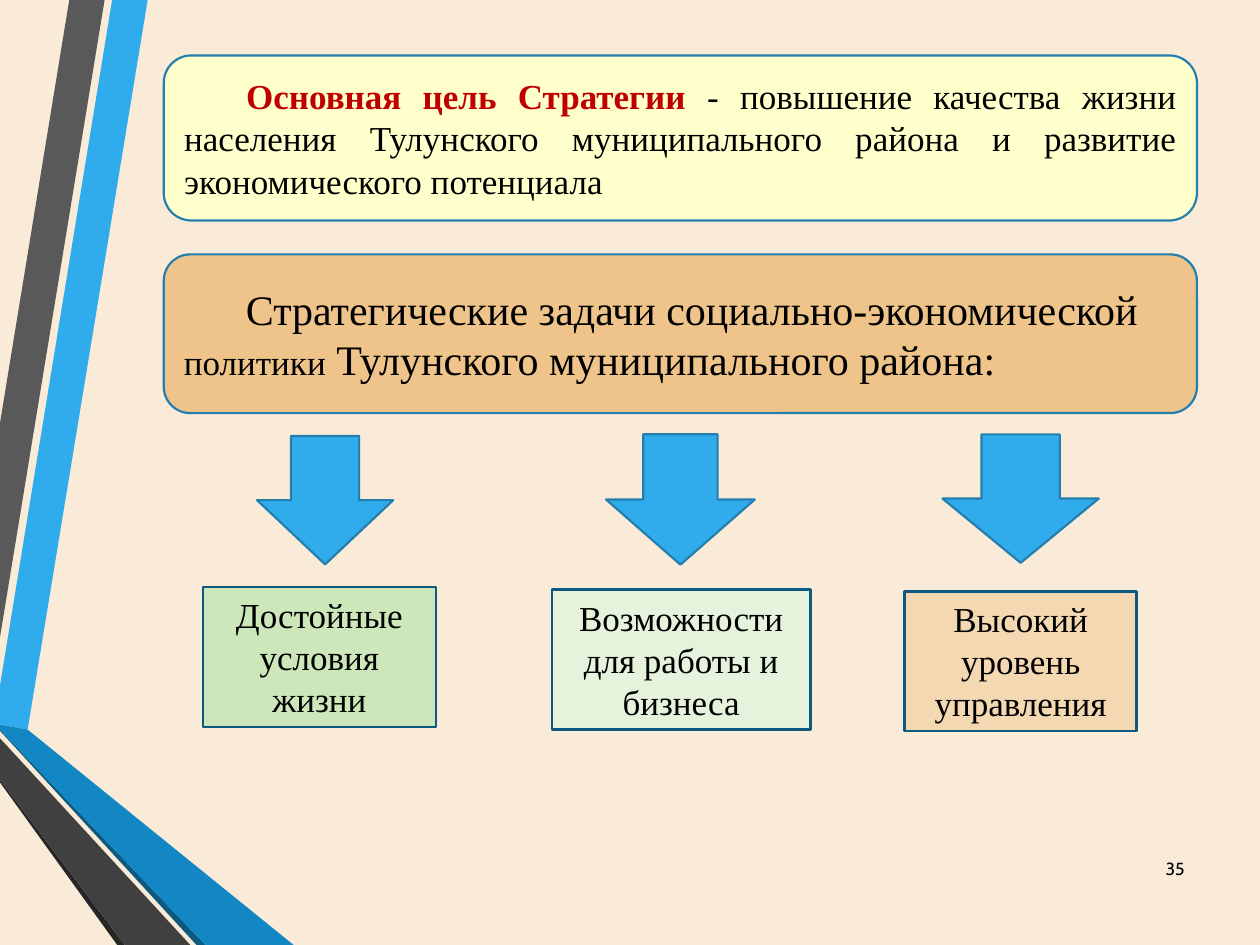
from pptx import Presentation
from pptx.dml.color import RGBColor
from pptx.enum.shapes import MSO_SHAPE as SHAPE
from pptx.enum.text import MSO_ANCHOR as ANCHOR, PP_ALIGN as ALIGN
from pptx.util import Pt

CREAM = RGBColor(0xF9, 0xEB, 0xD8)
BLUE = RGBColor(0x30, 0xAC, 0xEC)
MID_BLUE = RGBColor(0x12, 0x87, 0xC3)
EDGE_BLUE = RGBColor(0x24, 0x7F, 0xAF)
DARK_BLUE = RGBColor(0x0C, 0x5A, 0x82)
GREY = RGBColor(0x59, 0x59, 0x59)
DARK_GREY = RGBColor(0x40, 0x40, 0x40)
CHARCOAL = RGBColor(0x26, 0x26, 0x26)
YELLOW = RGBColor(0xFF, 0xFF, 0xCC)
ORANGE = RGBColor(0xEE, 0xC4, 0x8B)
GREEN = RGBColor(0xCC, 0xE7, 0xB9)
PALE_GREEN = RGBColor(0xE6, 0xF3, 0xDC)
PEACH = RGBColor(0xF3, 0xD8, 0xB2)
RED = RGBColor(0xC0, 0x00, 0x00)
BLACK = RGBColor(0x00, 0x00, 0x00)


class Deck:
    """Style of the deck and the slide being built."""
    font = "Times New Roman"
    number_font = "Cabin"

    def __init__(self, slide):
        self.s = slide
        slide.background.fill.solid()
        slide.background.fill.fore_color.rgb = CREAM

    def ribbon(self, color, points):
        pts = [(Pt(x), Pt(y)) for x, y in points]
        builder = self.s.shapes.build_freeform(*pts[0])
        builder.add_line_segments(pts[1:], close=True)
        sp = builder.convert_to_shape()
        sp.shadow.inherit = False
        sp.fill.solid()
        sp.fill.fore_color.rgb = color
        sp.line.fill.background()

    def shape(self, kind, box, fill, line, width):
        sp = self.s.shapes.add_shape(kind, *map(Pt, box))
        sp.shadow.inherit = False
        sp.fill.solid()
        sp.fill.fore_color.rgb = fill
        sp.line.color.rgb = line
        sp.line.width = Pt(width)
        return sp

    def text(self, sp, runs, align, anchor=ANCHOR.MIDDLE, indent=0, font=font):
        tf = sp.text_frame
        tf.word_wrap = True
        tf.vertical_anchor = anchor
        p = tf.paragraphs[0]
        p.alignment = align
        if indent:
            p._p.get_or_add_pPr().set("indent", str(Pt(indent)))
        for text, size, color, bold in runs:
            r = p.add_run()
            r.text = text
            r.font.name = font
            r.font.size = Pt(size)
            r.font.bold = bold
            r.font.color.rgb = color

    def panel(self, top, height, fill, runs, align):
        sp = self.shape(SHAPE.ROUNDED_RECTANGLE, (93.6, top, 590.4, height),
                        fill, EDGE_BLUE, 1.25)
        self.text(sp, runs, align, indent=35.4)

    def task(self, box, fill, text, anchor):
        sp = self.shape(SHAPE.RECTANGLE, box, fill, DARK_BLUE, 1.5)
        self.text(sp, [(text, 20, BLACK, False)], ALIGN.CENTER, anchor)

    def arrow(self, box):
        self.shape(SHAPE.DOWN_ARROW, box, BLUE, EDGE_BLUE, 1.25)

    def number(self, box, text):
        sp = self.s.shapes.add_textbox(*map(Pt, box))
        self.text(sp, [(text, 10, BLACK, False)], ALIGN.RIGHT,
                  font=self.number_font)


def main():
    prs = Presentation()
    prs.slide_width, prs.slide_height = Pt(720), Pt(540)
    deck = Deck(prs.slides.add_slide(prs.slide_layouts[6]))

    # Folded ribbons on the left
    deck.ribbon(BLUE, [(0, 391.7), (0, 414), (15.8, 416.9), (84.4, 0), (64.1, 0)])
    deck.ribbon(GREY, [(59.8, 0), (39.6, 0), (0, 241.9), (0, 364.3)])
    deck.ribbon(CHARCOAL, [(0, 445.7), (0, 447.1), (67, 540), (71.3, 540)])
    deck.ribbon(DARK_BLUE, [(0, 416.9), (0, 417.6), (112.3, 540), (117.4, 540)])
    deck.ribbon(MID_BLUE, [(0, 416.9), (117.4, 540), (167.8, 540),
                           (15.8, 416.9), (0, 414)])
    deck.ribbon(DARK_GREY, [(0, 445.7), (71.3, 540), (108.7, 540), (0, 421.9)])

    # Goal and heading of the tasks
    deck.panel(31.7, 94.3, YELLOW, [
        ("Основная цель Стратегии ", 20, RED, True),
        ("- повышение качества жизни населения Тулунского муниципального "
         "района и развитие экономического потенциала", 20, BLACK, False),
    ], ALIGN.JUSTIFY)
    deck.panel(145.4, 90.7, ORANGE, [
        ("Стратегические задачи социально-экономической ", 24, BLACK, False),
        ("политики", 20, BLACK, False),
        (" Тулунского муниципального района:", 24, BLACK, False),
    ], ALIGN.LEFT)

    # Three tasks, each under its arrow
    tasks = [
        ("Достойные условия жизни", GREEN, ANCHOR.TOP,
         (115.9, 335.5, 133.2, 79.9), (146.9, 249.1, 77.8, 73.4)),
        ("Возможности для работы и бизнеса", PALE_GREEN, ANCHOR.MIDDLE,
         (315.4, 337, 147.6, 79.9), (346.3, 248.2, 85, 74.5)),
        ("Высокий уровень управления", PEACH, ANCHOR.TOP,
         (517, 337.9, 132.5, 79.9), (538.6, 248.2, 89.3, 73.4)),
    ]
    for text, fill, anchor, box, arrow_box in tasks:
        deck.task(box, fill, text, anchor)
        deck.arrow(arrow_box)

    # Slide number
    deck.number((651.6, 481.7, 32.4, 28.8), "35")

    prs.save("out.pptx")


if __name__ == "__main__":
    main()
